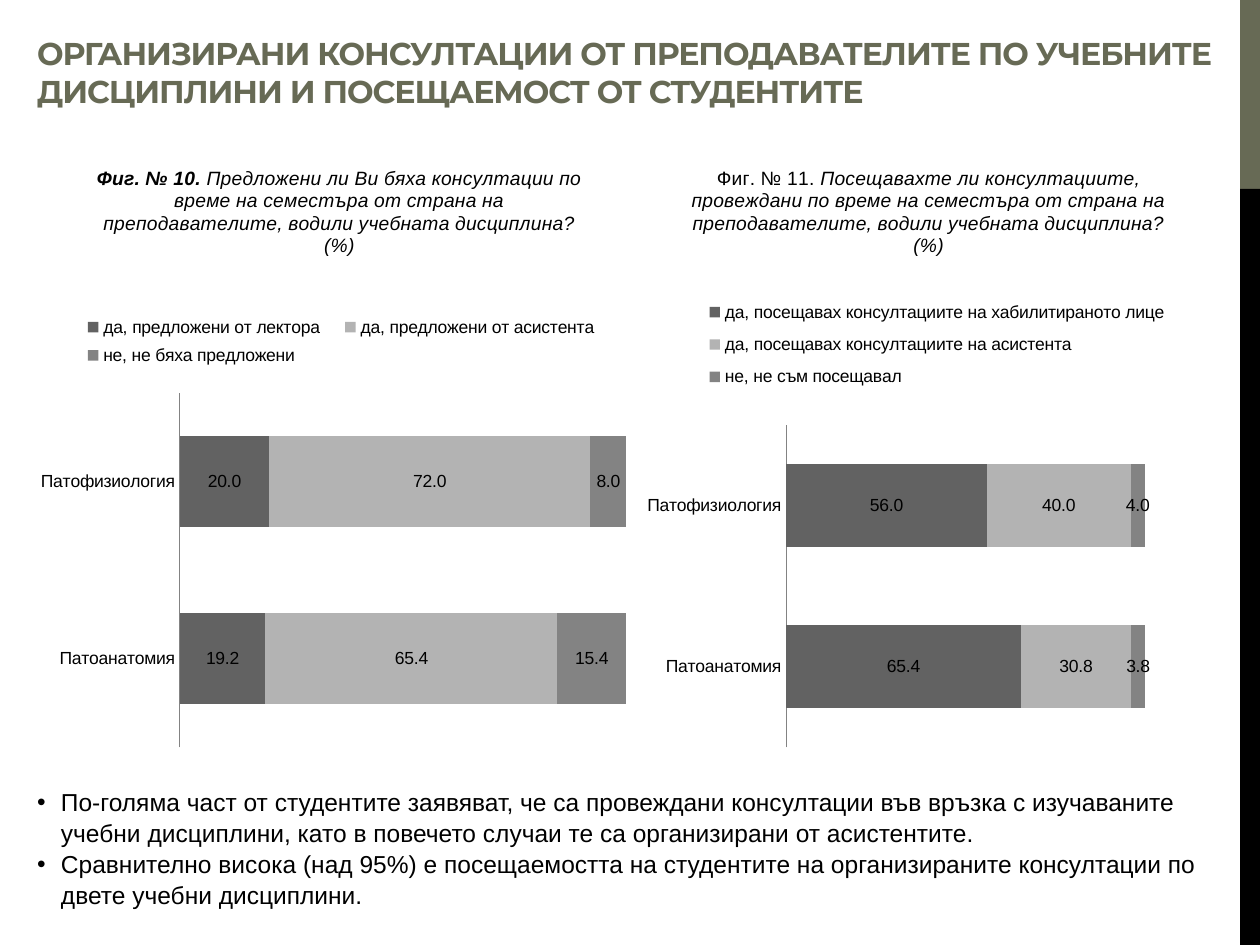
from lxml import etree
from pptx import Presentation
from pptx import util as u
from pptx.chart.data import CategoryChartData
from pptx.dml.color import RGBColor
from pptx.enum import chart as ch, shapes, text
from pptx.oxml import parse_xml
from pptx.oxml.ns import nsdecls, qn

OLIVE, BLACK, AXIS = "676A55", "000000", "838383"
SERIES_COLORS = ["626262", "B3B3B3", "838383"]
CATEGORIES = ["Патоанатомия", "Патофизиология"]


def rgb(value):
    return RGBColor.from_string(value)


def style(font, size, color=BLACK, name="Arial", bold=False, italic=False):
    font.size, font.name = u.Pt(size), name
    font.bold, font.italic = bold, italic
    font.color.rgb = rgb(color)


def add_band(s, top, height, color):
    sp = s.shapes.add_shape(shapes.MSO_SHAPE.RECTANGLE,
                            u.Cm(25), u.Cm(top), u.Cm(0.4), u.Cm(height))
    sp.shadow.inherit = False
    sp.fill.solid()
    sp.fill.fore_color.rgb = rgb(color)
    sp.line.fill.background()


def add_text(s, left, top, width, height):
    tf = s.shapes.add_textbox(*map(u.Cm, (left, top, width, height))).text_frame
    tf.word_wrap = True
    return tf


def add_title(s, words):
    tf = add_text(s, 0.5, 0.53, 24.2, 1.8)
    tf.vertical_anchor = text.MSO_ANCHOR.BOTTOM
    tf.text = words
    r = tf.paragraphs[0].runs[0]
    style(r.font, 18, OLIVE, "Montserrat", bold=True)
    r.font._element.set("spc", "-60")


def add_bullets(s, items):
    tf = add_text(s, 0.5, 15.72, 24.4, 3)
    for i, item in enumerate(items):
        p = tf.paragraphs[0] if i == 0 else tf.add_paragraph()
        p.text = item
        p.line_spacing = 1.05
        style(p.runs[0].font, 14)
        pPr = p._p.get_or_add_pPr()
        pPr.set("marL", str(u.Cm(0.48)))
        pPr.set("indent", str(-u.Cm(0.48)))
        pPr.append(parse_xml(f'<a:buFont {nsdecls("a")} typeface="Arial"/>'))
        pPr.append(parse_xml(f'<a:buChar {nsdecls("a")} char="•"/>'))


def set_layout(parent, after, x, y, w=None, h=None, inner=False):
    """Place a chart part at fractions of the chart's size."""
    for old in parent.findall(qn("c:layout")):
        parent.remove(old)
    layout = etree.Element(qn("c:layout"))
    manual = etree.SubElement(layout, qn("c:manualLayout"))
    values = [("layoutTarget", "inner")] if inner else []
    values += [("xMode", "edge"), ("yMode", "edge"),
               ("x", x), ("y", y), ("w", w), ("h", h)]
    for tag, value in values:
        if value is not None:
            etree.SubElement(manual, qn(f"c:{tag}")).set("val", str(value))
    previous = parent.find(qn(after)) if after else None
    parent.insert(0 if previous is None else parent.index(previous) + 1, layout)


def add_bar_chart(s, kind, left, width, axis_max, number, question, bold,
                  series, title_at, legend_at, plot_at):
    data = CategoryChartData(number_format="0.0")
    data.categories = CATEGORIES
    for name, values in series:
        data.add_series(name, values)
    chart = s.shapes.add_chart(kind, u.Cm(left), u.Cm(2.72), u.Cm(width),
                               u.Cm(13), data).chart
    style(chart.font, 10)

    # Title
    chart.has_title = True
    p = chart.chart_title.text_frame.paragraphs[0]
    for words, is_bold, italic in [(number, bold, bold), (question, False, True)]:
        r = p.add_run()
        r.text = words
        style(r.font, 11, bold=is_bold, italic=italic)
    chart.chart_title.include_in_layout = False
    set_layout(chart.chart_title._element, "c:tx", *title_at)

    # Legend
    chart.has_legend = True
    chart.legend.position = ch.XL_LEGEND_POSITION.TOP
    chart.legend.include_in_layout = False
    style(chart.legend.font, 10)
    set_layout(chart.legend._element, "c:legendPos", *legend_at)

    # Axes
    cat, val = chart.category_axis, chart.value_axis
    cat.major_tick_mark = ch.XL_TICK_MARK.NONE
    cat.format.line.color.rgb = rgb(AXIS)
    cat.format.line.width = u.Pt(0.75)
    style(cat.tick_labels.font, 10)
    val.has_major_gridlines = False
    val.minimum_scale, val.maximum_scale = 0, axis_max
    val.visible = False

    # Bars and labels
    plot = chart.plots[0]
    plot.gap_width, plot.overlap = 95, 100
    plot.vary_by_categories = False
    for bars, color in zip(plot.series, SERIES_COLORS):
        bars.format.fill.solid()
        bars.format.fill.fore_color.rgb = rgb(color)
        labels = bars.data_labels
        labels.show_value = True
        labels.number_format, labels.number_format_is_linked = "0.0", False
        labels.position = ch.XL_LABEL_POSITION.CENTER
        style(labels.font, 10)
    plot_area = chart._chartSpace.find(".//" + qn("c:plotArea"))
    set_layout(plot_area, None, *plot_at, inner=True)


def main():
    prs = Presentation()
    prs.slide_width, prs.slide_height = u.Cm(25.4), u.Cm(19.05)
    s = prs.slides.add_slide(prs.slide_layouts[6])

    # Side bands
    add_band(s, 0, 3.81, OLIVE)
    add_band(s, 3.81, 15.24, BLACK)

    add_title(s, "ОРГАНИЗИРАНИ КОНСУЛТАЦИИ ОТ ПРЕПОДАВАТЕЛИТЕ ПО УЧЕБНИТЕ "
                 "ДИСЦИПЛИНИ И ПОСЕЩАЕМОСТ ОТ СТУДЕНТИТЕ")
    add_bullets(s, [
        "По-голяма част от студентите заявяват, че са провеждани консултации "
        "във връзка с изучаваните учебни дисциплини, като в повечето случаи "
        "те са организирани от асистентите.",
        "Сравнително висока (над 95%) е посещаемостта на студентите на "
        "организираните консултации по двете учебни дисциплини."])

    # Consultations offered
    add_bar_chart(
        s, ch.XL_CHART_TYPE.BAR_STACKED_100, 0.5, 12.5, 1, "Фиг. № 10. ",
        "Предложени ли Ви бяха консултации по време на семестъра от страна на "
        "преподавателите, водили учебната дисциплина? (%)", True,
        [("да, предложени от лектора", (19.2, 20)),
         ("да, предложени от асистента", (65.4, 72)),
         ("не, не бяха предложени", (15.4, 8))],
        (0.11, 0.04), (0.07, 0.27, 0.88, 0.1), (0.25, 0.4, 0.72, 0.55))

    # Consultations attended
    add_bar_chart(
        s, ch.XL_CHART_TYPE.BAR_STACKED, 12.5, 12.4, 120, "Фиг. № 11. ",
        "Посещавахте ли консултациите, провеждани по време на семестъра от "
        "страна на преподавателите, водили учебната дисциплина? (%)", False,
        [("да, посещавах консултациите на хабилитираното лице", (65.4, 56)),
         ("да, посещавах консултациите на асистента", (30.8, 40)),
         ("не, не съм посещавал", (3.8, 4))],
        (0.11, 0.04), (0.13, 0.24, 0.77, 0.17), (0.27, 0.45, 0.7, 0.5))

    prs.save("out.pptx")


if __name__ == "__main__":
    main()
